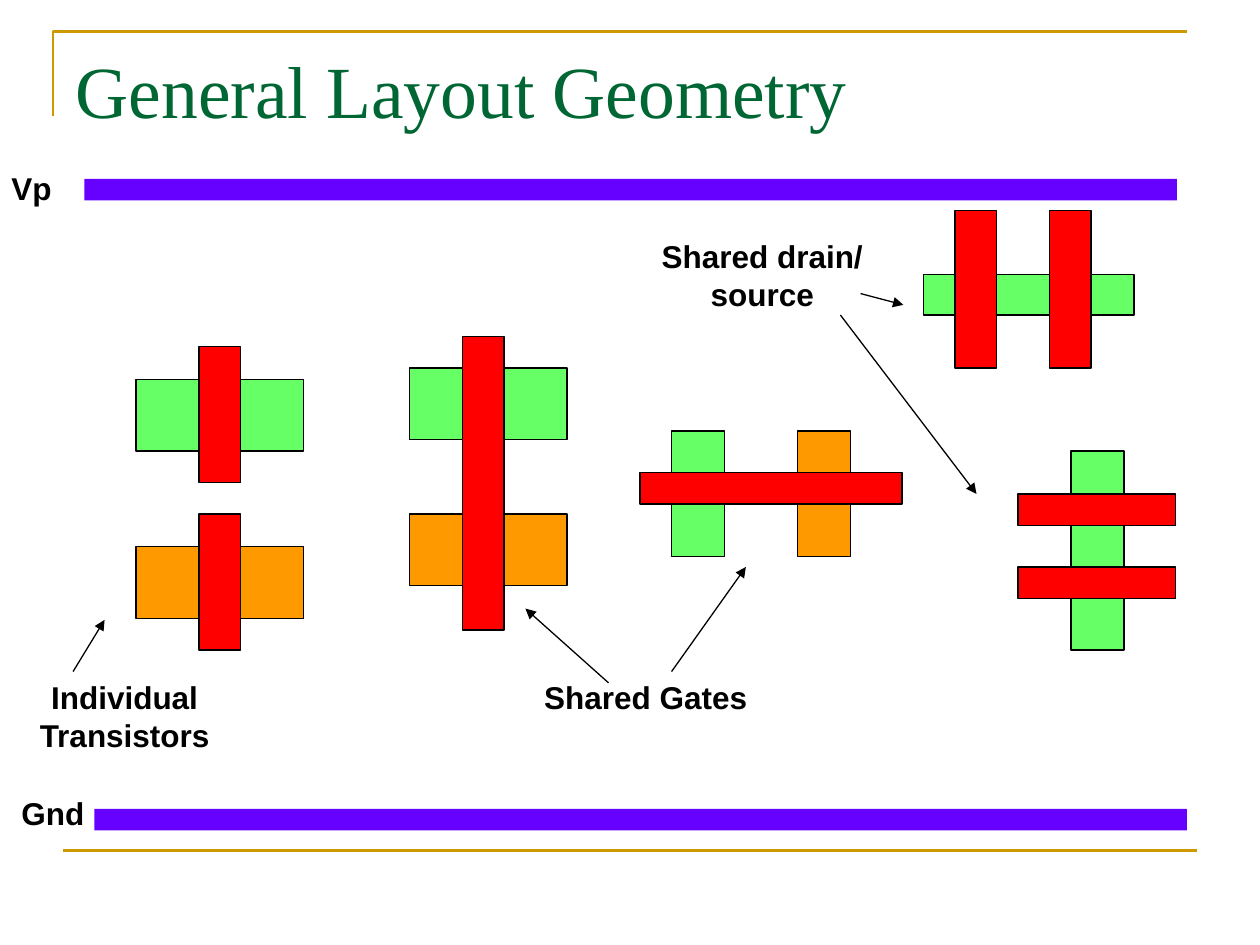
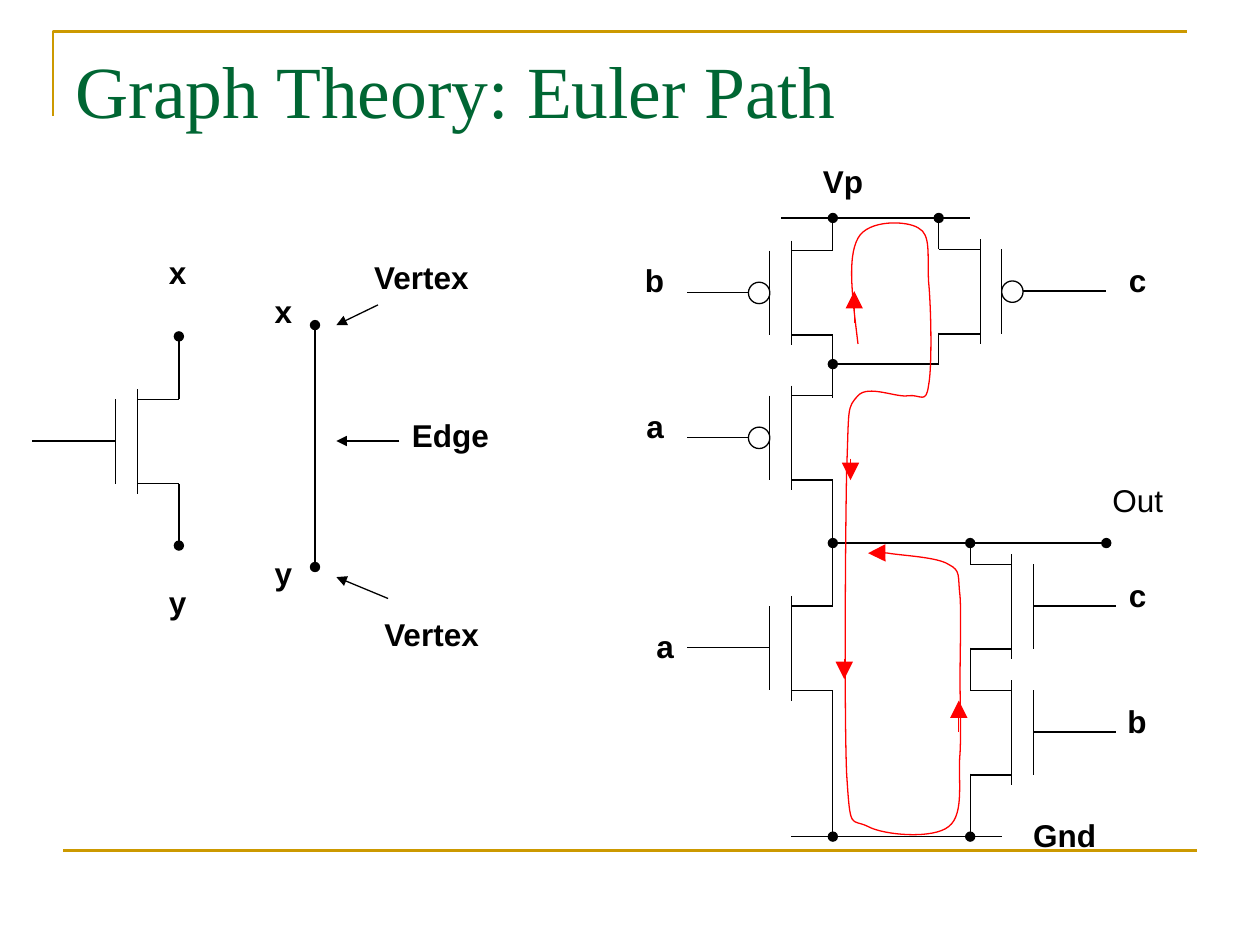
from dataclasses import dataclass

from pptx import Presentation
from pptx.dml.color import RGBColor
from pptx.enum.shapes import MSO_CONNECTOR, MSO_SHAPE
from pptx.enum.text import MSO_ANCHOR, MSO_AUTO_SIZE, PP_ALIGN
from pptx.oxml.ns import qn
from pptx.util import Inches, Pt
from lxml.etree import SubElement


@dataclass(frozen=True)
class Theme:
    title: str = "006633"
    frame: str = "CC9900"
    ink: str = "000000"
    n_diff: str = "66FF66"
    p_diff: str = "FF9900"
    gate: str = "FF0000"
    rail: str = "6600FF"
    euler: str = "FF0000"
    title_font: str = "Times New Roman"
    label_font: str = "Arial"
    title_size: int = 42
    label_size: int = 18
    thin: float = 0.5
    wire: float = 0.75
    rule: float = 1.5


T = Theme()


def rgb(value):
    return RGBColor.from_string(value)


def style_line(sp, color, width, head=None, tail=None, size="med"):
    sp.line.color.rgb = rgb(color)
    sp.line.width = Pt(width)
    ln = sp.element.spPr.find(qn("a:ln"))
    for tag, kind in (("a:headEnd", head), ("a:tailEnd", tail)):
        if kind:
            SubElement(ln, qn(tag), type=kind, w=size, len=size)


def lines_to_curves(sp):
    """Turn each three line segments of a freeform into one cubic curve."""
    outline = next(sp.element.iter(qn("a:path")))
    segments = outline.findall(qn("a:lnTo"))
    for i in range(0, len(segments), 3):
        curve = SubElement(outline, qn("a:cubicBezTo"))
        for segment in segments[i:i + 3]:
            curve.append(segment[0])
            outline.remove(segment)


class Pen:
    """Draws on a slide or group, measuring in inches from the corner of a region."""

    def __init__(self, s, x=0, y=0):
        self.shapes, self.x, self.y = s.shapes, x, y

    def at(self, x, y):
        return Inches(self.x + x), Inches(self.y + y)

    def group(self, x, y):
        return Pen(self.shapes.add_group_shape(), self.x + x, self.y + y)

    def shape(self, x, y, w, h, fill=None, outline=True, kind=MSO_SHAPE.RECTANGLE):
        sp = self.shapes.add_shape(kind, *self.at(x, y), Inches(w), Inches(h))
        sp.shadow.inherit = False
        if fill:
            sp.fill.solid()
            sp.fill.fore_color.rgb = rgb(fill)
        else:
            sp.fill.background()
        if outline:
            style_line(sp, T.ink, T.wire)
        else:
            sp.line.fill.background()

    def line(self, x1, y1, x2, y2, color=T.ink, width=T.wire, **ends):
        sp = self.shapes.add_connector(
            MSO_CONNECTOR.STRAIGHT, *self.at(x1, y1), *self.at(x2, y2))
        style_line(sp, color, width, **ends)
        SubElement(sp.element.spPr, qn("a:effectLst"))

    def arrow(self, *ends, **options):
        self.line(*ends, tail="triangle", **options)

    def outline(self, points, color, width, **ends):
        start, *rest = [self.at(*p) for p in points]
        fb = self.shapes.build_freeform(*start)
        fb.add_line_segments(rest, close=False)
        sp = fb.convert_to_shape()
        sp.shadow.inherit = False
        sp.fill.background()
        style_line(sp, color, width, **ends)
        return sp

    def label(self, text, x, y, w=0.34, h=0.4, bold=True, wrap=False):
        tf = self.shapes.add_textbox(*self.at(x, y), Inches(w), Inches(h)).text_frame
        tf.word_wrap = wrap
        tf.auto_size = MSO_AUTO_SIZE.SHAPE_TO_FIT_TEXT
        tf.text = text
        for p in tf.paragraphs:
            p.alignment = PP_ALIGN.CENTER
            for r in p.runs:
                r.font.name, r.font.size = T.label_font, Pt(T.label_size)
                r.font.bold, r.font.color.rgb = bold, rgb(T.ink)


def titled_slide(prs, title):
    s = prs.slides.add_slide(prs.slide_layouts[5])
    pen = Pen(s)
    # Corner frame and bottom rule
    pen.outline([(0.42, 0.92), (0.42, 0.25), (9.42, 0.25)], T.frame, T.rule)
    pen.line(0.5, 6.75, 9.5, 6.75, T.frame, T.rule)
    # Title
    sp = s.shapes.title
    sp.left, sp.top, sp.width, sp.height = map(Inches, (0.5, 0.31, 9, 1.25))
    tf = sp.text_frame
    tf.text = title
    tf.vertical_anchor = MSO_ANCHOR.TOP
    p = tf.paragraphs[0]
    p.alignment = PP_ALIGN.LEFT
    r = p.runs[0]
    r.font.name, r.font.size = T.title_font, Pt(T.title_size)
    r.font.color.rgb = rgb(T.title)
    return s


# Layout geometry

def power_rail(pen, text, label_w, bar_dy):
    pen.label(text, 0, 0, label_w)
    pen.shape(0.68, bar_dy, 8.67, 0.17, T.rail, outline=False)


def individual_transistors(pen):
    for y, diffusion in ((0, T.n_diff), (1.33, T.p_diff)):
        device = pen.group(0.87, y)
        device.shape(0, 0.26, 0.5, 0.57, diffusion)
        device.shape(0.5, 0, 0.33, 1.08, T.gate)
        device.shape(0.83, 0.26, 0.5, 0.57, diffusion)
    pen.label("Individual\nTransistors", 0, 2.58, 1.56, 0.7)
    pen.arrow(0.37, 2.58, 0.62, 2.17)


def shared_gates(pen):
    # Upright gate over two diffusions
    for y, diffusion in ((0.25, T.n_diff), (1.41, T.p_diff)):
        pen.shape(0, y, 1.25, 0.57, diffusion)
    pen.shape(0.42, 0, 0.33, 2.33, T.gate)
    # Level gate over two diffusions
    for x, diffusion in ((2.08, T.n_diff), (3.08, T.p_diff)):
        pen.shape(x, 0.75, 0.42, 1, diffusion)
    pen.shape(1.83, 1.08, 2.08, 0.25, T.gate)
    # Callout
    pen.label("Shared Gates", 0.97, 2.66, 1.81)
    pen.arrow(1.58, 2.75, 0.92, 2.16)
    pen.arrow(2.08, 2.66, 2.67, 1.83)


def shared_drains(pen):
    # Level diffusion under two gates
    pen.shape(2.18, 0.51, 1.67, 0.32, T.n_diff)
    for x in (2.43, 3.18):
        pen.shape(x, 0, 0.33, 1.25, T.gate)
    # Upright diffusion under two gates
    pen.shape(3.35, 1.91, 0.42, 1.58, T.n_diff)
    for y in (2.25, 2.83):
        pen.shape(2.93, y, 1.25, 0.25, T.gate)
    # Callout
    pen.label("Shared drain/\nsource", 0, 0.16, 1.8, 0.7)
    pen.arrow(1.68, 0.66, 2.02, 0.75)
    pen.arrow(1.52, 0.83, 2.6, 2.25)


def layout_slide(prs):
    s = titled_slide(prs, "General Layout Geometry")
    individual_transistors(Pen(s, 0.21, 2.75))
    shared_gates(Pen(s, 3.25, 2.67))
    shared_drains(Pen(s, 5.15, 1.67))
    power_rail(Pen(s, -0.01, 1.29), "Vp", 0.52, 0.13)
    power_rail(Pen(s, 0.07, 6.25), "Gnd", 0.7, 0.17)


# Euler path

def transistor(pen, x, y, lead_x, pmos=False):
    """Symbol with its upper terminal at x, y and its gate lead ending at lead_x."""
    side = 1 if lead_x > x else -1
    channel, gate = x + side * 0.33, x + side * 0.5
    pen.line(channel, y - 0.08, channel, y + 0.75, width=T.thin)
    pen.line(gate, y, gate, y + 0.67, width=T.thin)
    for terminal_y in (y, y + 0.67):
        pen.line(x, terminal_y, channel, terminal_y)
    if pmos:
        bubble = min(gate, gate + side * 0.17)
        pen.shape(bubble, y + 0.25, 0.17, 0.17, kind=MSO_SHAPE.OVAL)
        gate += side * 0.17
    pen.line(gate, y + 0.33, lead_x, y + 0.33)


def transistor_model(pen):
    transistor(pen, 1.17, 1.21, 0)
    pen.line(1.17, 0.71, 1.17, 1.21, head="oval")
    pen.line(1.17, 1.88, 1.17, 2.37, tail="oval")
    pen.label("x", 0.99, 0)
    pen.label("y", 0.99, 2.62)


def graph_model(pen):
    pen.line(0.42, 0.58, 0.42, 2.5, head="oval", tail="oval")
    pen.label("x", 0, 0.27)
    pen.label("y", 0, 2.35)
    pen.label("Vertex", 0.69, 0, 1.15, wrap=True)
    pen.label("Edge", 1.09, 1.25, 0.81)
    pen.label("Vertex", 0.77, 2.83, 1.15, wrap=True)
    for x, y, tip_y in ((0.92, 0.42, 0.58), (1.09, 1.5, 1.5), (1, 2.75, 2.58)):
        pen.arrow(x, y, 0.59, tip_y)


def circuit(pen):
    left, right_p, right_n = 1.61, 2.45, 2.7
    supply, out, ground = 0.49, 3.07, 5.4
    # Transistors
    for x, y, lead_x, pmos in (
            (left, 0.75, 0.45, True), (left, 1.9, 0.45, True),
            (left, 3.57, 0.45, False), (right_p, 0.74, 3.78, True),
            (right_n, 3.24, 3.86, False), (right_n, 4.24, 3.86, False)):
        transistor(pen, x, y, lead_x, pmos)
    # Horizontal wires
    pen.line(1.2, supply, 2.7, supply)
    pen.line(right_p, 1.65, left, 1.65, tail="oval")
    pen.line(left, out, 3.78, out, head="oval", tail="oval")
    pen.line(1.28, ground, 2.95, ground)
    # Vertical wires
    for x, y1, y2, head, tail in (
            (left, supply, 0.75, "oval", None), (left, 1.42, 1.92, None, None),
            (left, 2.57, 3.07, None, None), (left, 3.07, 3.57, None, None),
            (left, 4.24, ground, None, "oval"),
            (right_p, supply, 0.74, "oval", None), (right_p, 1.4, 1.65, None, None),
            (right_n, out, 3.24, "oval", None), (right_n, 3.9, 4.24, None, None),
            (right_n, 4.9, ground, None, "oval")):
        pen.line(x, y1, x, y2, head=head, tail=tail)
    # Node and input names
    pen.label("Vp", 1.43, 0, 0.52)
    pen.label("Gnd", 3.1, 5.19, 0.7)
    pen.label("Out", 3.73, 2.53, 0.6, bold=False)
    for text, x, y in (("b", 0.02, 0.78), ("a", 0.03, 1.94), ("a", 0.11, 3.69),
                       ("c", 3.86, 0.78), ("c", 3.86, 3.28), ("b", 3.85, 4.28)):
        pen.label(text, x, y)


def euler_path(pen):
    # Start, then two control points and an end point for each curve
    points = (
        (0.11, 0.99),
        (0.07, 0.65), (0.02, 0.31), (0.11, 0.15), (0.19, 0), (0.5, 0.01), (0.59, 0.07),
        (0.69, 0.12), (0.66, 0.28), (0.67, 0.49), (0.69, 0.69), (0.7, 1.17), (0.67, 1.32),
        (0.65, 1.47), (0.61, 1.39), (0.51, 1.4), (0.42, 1.42), (0.19, 1.31), (0.11, 1.4),
        (0.02, 1.5), (0.04, 1.49), (0.02, 1.99), (0.01, 2.49), (0, 3.93), (0.02, 4.4),
        (0.05, 4.87), (0.05, 4.75), (0.19, 4.82), (0.32, 4.89), (0.71, 4.92), (0.83, 4.82),
        (0.96, 4.72), (0.9, 4.43), (0.92, 4.24), (0.93, 4.04), (0.92, 3.86), (0.92, 3.65),
        (0.92, 3.44), (0.93, 3.14), (0.92, 2.99), (0.9, 2.83), (0.93, 2.79), (0.83, 2.74),
        (0.74, 2.68), (0.46, 2.67), (0.35, 2.65), (0.24, 2.64), (0.21, 2.65), (0.19, 2.65))
    lines_to_curves(pen.outline(points, T.euler, T.wire, tail="triangle", size="lg"))
    # Direction marks along the path
    for x, y1, y2 in ((0.08, 0.82, 0.57), (0.05, 1.9, 2.07),
                      (0, 3.49, 3.65), (0.91, 4.07, 3.82)):
        pen.arrow(x, y1, x, y2, color=T.euler, size="lg")


def euler_slide(prs):
    s = titled_slide(prs, "Graph Theory: Euler Path")
    circuit(Pen(s, 5, 1.24))
    euler_path(Pen(s, 6.7, 1.74))
    transistor_model(Pen(s, 0.25, 1.96))
    graph_model(Pen(s, 2.08, 2))


def main():
    prs = Presentation()
    prs.slide_width, prs.slide_height = Inches(10), Inches(7.5)
    layout_slide(prs)
    euler_slide(prs)
    prs.save("out.pptx")


if __name__ == "__main__":
    main()
